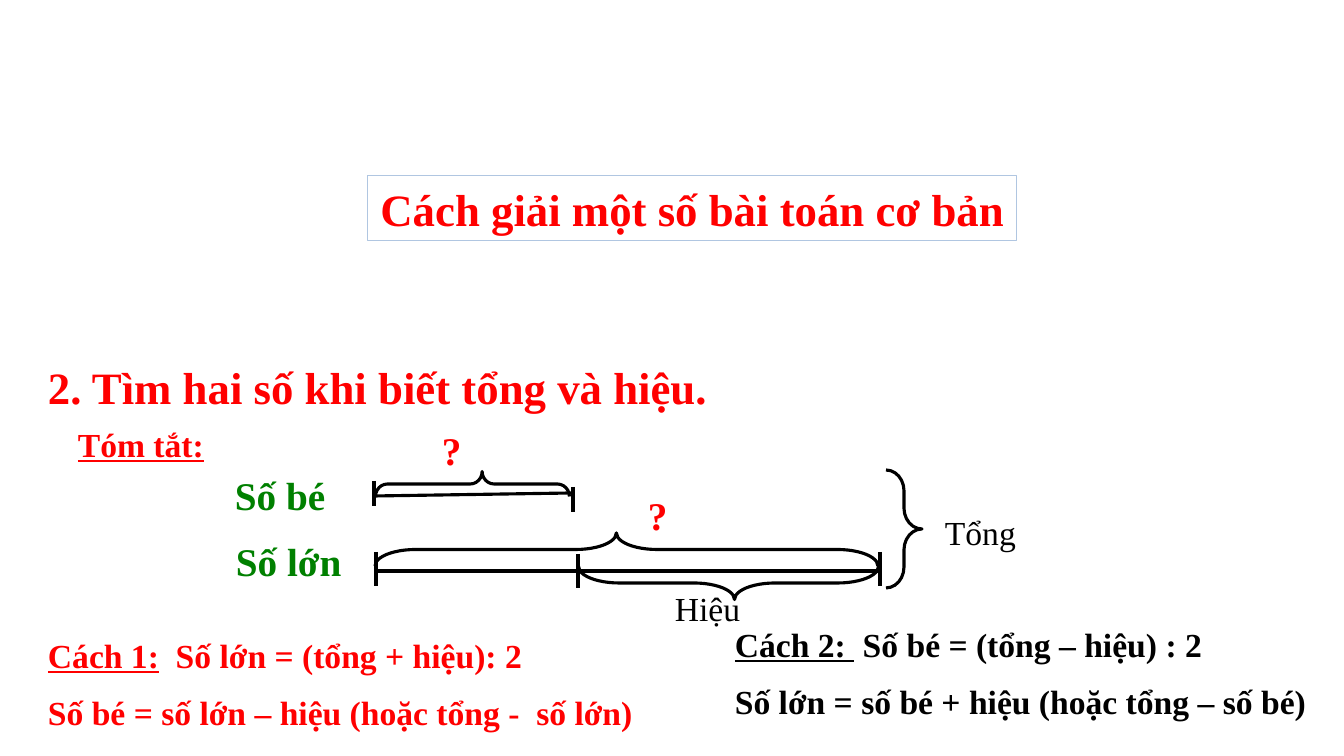
import pptx
import pptx.util
import pptx.dml.color
import pptx.enum.shapes
import pptx.enum.text
import pptx.oxml
import pptx.oxml.ns

RGB = pptx.dml.color.RGBColor
RED = RGB(0xFF, 0x00, 0x00)
GREEN = RGB(0x00, 0x80, 0x00)
BLACK = RGB(0x00, 0x00, 0x00)
FRAME = RGB(0xB0, 0xC6, 0xE1)
FONT = "Times New Roman"
EMU_PER_PX = 914400 / 100.8
ALIGN = pptx.enum.text.PP_ALIGN
AUTO = pptx.enum.text.MSO_AUTO_SIZE
SHAPE = pptx.enum.shapes.MSO_SHAPE

TITLE = ("Cách giải một số bài toán cơ bản", (368, 176, 649, 65), 32, RED)
HEADING = ("2. Tìm hai số khi biết tổng và hiệu.", (38, 355, 1210, 62), 32, RED)
SUMMARY = ("Tóm tắt:", (68, 419, 208, 51), 24, RED)

DIAGRAM_LABELS = [
    ("?", (432, 421, 136, 57), 28, RED, True),
    ("?", (638, 486, 143, 57), 28, RED, True),
    ("Số bé", (225, 466, 143, 57), 28, GREEN, True),
    ("Số lớn", (226, 532, 153, 57), 28, GREEN, True),
    ("Tổng", (935, 507, 123, 51), 24, BLACK, False),
    ("Hiệu", (665, 583, 123, 51), 24, BLACK, False),
]

METHODS = [
    ("Cách 2: ", " Số bé = (tổng – hiệu) : 2",
     "Số lớn = số bé + hiệu (hoặc tổng – số bé)", (725, 619, 596, 109), BLACK),
    ("Cách 1:", "  Số lớn = (tổng + hiệu): 2",
     "Số bé = số lớn – hiệu (hoặc tổng -  số lớn)", (38, 630, 638, 109), RED),
]

BRACES = [
    ((886, 470, 36, 118), 0, (0.58, 0.5)),
    ((460, 387, 25, 194), 270, (0.48, 0.55)),
    ((610, 298, 33, 503), 270, (1.23, 0.48)),
    ((712, 433, 33, 300), 90, (1.23, 0.48)),
]

SEGMENTS = [(374, 496, 572, 493), (377, 571, 881, 571)]
TICKS = [(374, 481, 25), (573, 487, 25), (376, 552, 34), (578, 554, 34), (880, 552, 34)]


def px(*values):
    return [pptx.util.Emu(round(v * EMU_PER_PX)) for v in values]


def style(r, size, color, bold=True, underline=False):
    r.font.name = FONT
    r.font.size = pptx.util.Pt(size)
    r.font.bold = bold
    r.font.underline = underline
    r.font.color.rgb = color


def add_text(slide, text, box, size, color, bold=True, underline=False):
    tf = slide.shapes.add_textbox(*px(*box)).text_frame
    tf.word_wrap = True
    tf.text = text
    style(tf.paragraphs[0].runs[0], size, color, bold, underline)


def add_title(slide, text, box, size, color):
    sp = slide.shapes.add_shape(SHAPE.RECTANGLE, *px(*box))
    sp.shadow.inherit = False
    sp.fill.background()
    sp.line.color.rgb = FRAME
    sp.line.width = pptx.util.Pt(0.75)
    tf = sp.text_frame
    tf.word_wrap = False
    tf.auto_size = AUTO.SHAPE_TO_FIT_TEXT
    tf.text = text
    tf.paragraphs[0].alignment = ALIGN.CENTER
    style(tf.paragraphs[0].runs[0], size, color)


def add_method(slide, name, first, second, box, color):
    tf = slide.shapes.add_textbox(*px(*box)).text_frame
    tf.word_wrap = True
    for parts in ((name, first), (second,)):
        p = tf.add_paragraph() if tf.text else tf.paragraphs[0]
        p.alignment = ALIGN.JUSTIFY
        p.space_before = p.space_after = pptx.util.Pt(6)
        for part in parts:
            r = p.add_run()
            r.text = part
            style(r, 24, color, underline=part == name)


def add_brace(slide, box, rotation, adjustments):
    sp = slide.shapes.add_shape(SHAPE.RIGHT_BRACE, *px(*box))
    sp.shadow.inherit = False
    sp.rotation = rotation
    sp.fill.background()
    sp.line.color.rgb = BLACK
    sp.line.width = pptx.util.Pt(2.25)
    for i, value in enumerate(adjustments):
        sp.adjustments[i] = value


def add_line(slide, x1, y1, x2, y2):
    line = slide.shapes.add_connector(
        pptx.enum.shapes.MSO_CONNECTOR.STRAIGHT, *px(x1, y1, x2, y2))
    line.line.color.rgb = BLACK
    line.line.width = pptx.util.Pt(2.25)
    sp_pr = line._element.spPr
    sp_pr.append(pptx.oxml.parse_xml(
        "<a:effectLst %s/>" % pptx.oxml.ns.nsdecls("a")))


def main():
    prs = pptx.Presentation()
    prs.slide_width, prs.slide_height = px(1344, 756)
    slide = prs.slides.add_slide(prs.slide_layouts[6])
    add_title(slide, *TITLE)
    add_text(slide, *HEADING)
    add_text(slide, *SUMMARY, underline=True)
    for method in METHODS:
        add_method(slide, *method)
    for brace in BRACES:
        add_brace(slide, *brace)
    for segment in SEGMENTS:
        add_line(slide, *segment)
    for x, top, height in TICKS:
        add_line(slide, x, top, x, top + height)
    for label in DIAGRAM_LABELS:
        add_text(slide, *label)
    prs.save("out.pptx")


if __name__ == "__main__":
    main()
